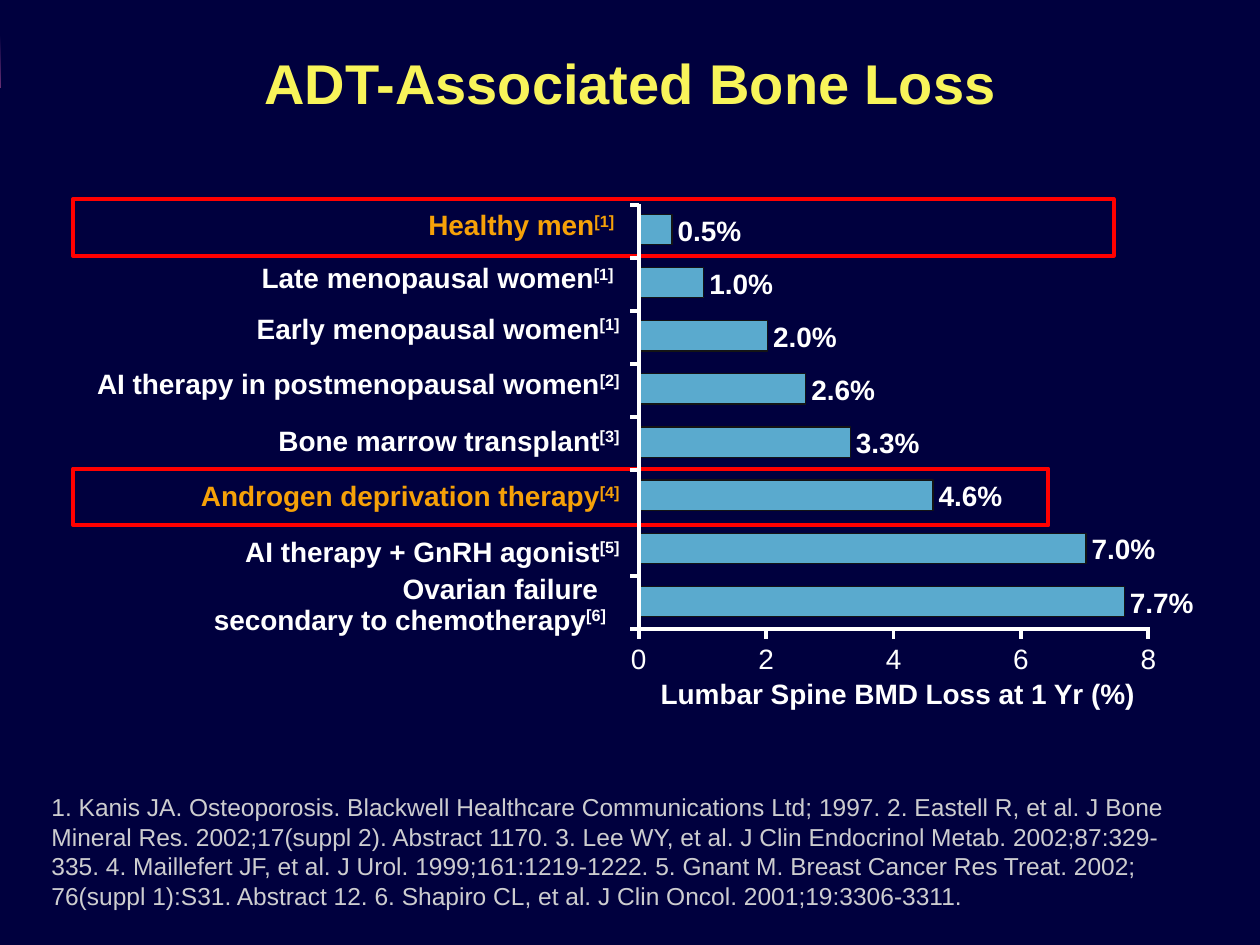
import dataclasses

import pptx
import pptx.dml.color
import pptx.enum.shapes
import pptx.enum.text
import pptx.oxml
import pptx.oxml.ns
import pptx.util

Pt = pptx.util.Pt
ALIGN = pptx.enum.text.PP_ALIGN
RECTANGLE = pptx.enum.shapes.MSO_SHAPE.RECTANGLE


def color(value):
    return pptx.dml.color.RGBColor.from_string(value)


@dataclasses.dataclass(frozen=True)
class Theme:
    font: str = "Arial"
    background: str = "00003E"
    band: str = "682E73"
    title: str = "F8F45A"
    text: str = "FFFFFF"
    accent: str = "F6A108"
    frame: str = "FF0000"
    bar: str = "5AAACE"
    bar_line: str = "141415"
    reference: str = "CDCDCF"
    title_size: int = 32
    body_size: int = 16
    reference_size: int = 14
    heavy_line: float = 2.25
    thin_line: float = 0.75


class SlideBuilder:
    def __init__(self, presentation, theme):
        self.theme = theme
        self.slide = presentation.slides.add_slide(presentation.slide_layouts[5])
        fill = self.slide.background.fill
        fill.solid()
        fill.fore_color.rgb = color(theme.background)

    def format_run(self, run, font_color, size, bold, superscript=False):
        values = {"name": self.theme.font, "size": Pt(size), "bold": bold}
        for name, value in values.items():
            setattr(run.font, name, value)
        run.font.color.rgb = color(font_color)
        if superscript:
            run.font._element.set("baseline", "30000")

    def title(self, text, left, top, width, height):
        shape = self.slide.shapes.title
        box = {"left": left, "top": top, "width": width, "height": height}
        for name, value in box.items():
            setattr(shape, name, Pt(value))
        shape.fill.solid()
        shape.fill.fore_color.rgb = color(self.theme.background)
        shape.text_frame.vertical_anchor = pptx.enum.text.MSO_ANCHOR.MIDDLE
        paragraph = shape.text_frame.paragraphs[0]
        paragraph.alignment = ALIGN.CENTER
        run = paragraph.add_run()
        run.text = text
        self.format_run(run, self.theme.title, self.theme.title_size, True)

    def rectangle(self, left, top, width, height, fill=None, line=None, weight=1):
        shape = self.slide.shapes.add_shape(
            RECTANGLE, Pt(left), Pt(top), Pt(width), Pt(height))
        shape.shadow.inherit = False
        if fill:
            shape.fill.solid()
            shape.fill.fore_color.rgb = color(fill)
        else:
            shape.fill.background()
        if line:
            shape.line.color.rgb = color(line)
            shape.line.width = Pt(weight)
        else:
            shape.line.fill.background()
        return shape

    def band(self, width, height):
        shape = self.rectangle(0, 0, width, height)
        shape.fill.gradient()
        shape.fill.gradient_angle = 90
        stops = ((0, self.theme.band), (0.6, self.theme.background))
        for stop, (position, value) in zip(shape.fill.gradient_stops, stops):
            stop.position = position
            stop.color.rgb = color(value)
        # Keep the band behind the title
        self.slide.shapes._spTree.insert(2, shape._element)

    def line(self, start, end):
        connector = self.slide.shapes.add_connector(
            pptx.enum.shapes.MSO_CONNECTOR.STRAIGHT, *map(Pt, start + end))
        connector.line.color.rgb = color(self.theme.text)
        connector.line.width = Pt(self.theme.heavy_line)
        connector._element.spPr.append(
            pptx.oxml.parse_xml("<a:effectLst %s/>" % pptx.oxml.ns.nsdecls("a")))

    def text(self, lines, left, top, width, height, alignment, font_color=None,
             size=None, bold=False, wrap=False, inset=(0, 0), spacing=None, note=""):
        shape = self.slide.shapes.add_textbox(
            Pt(left), Pt(top), Pt(width), Pt(height))
        frame = shape.text_frame
        horizontal, vertical = map(Pt, inset)
        values = {"word_wrap": wrap, "margin_left": horizontal,
                  "margin_right": horizontal, "margin_top": vertical,
                  "margin_bottom": vertical}
        for name, value in values.items():
            setattr(frame, name, value)
        for index, line in enumerate(lines):
            paragraph = frame.add_paragraph() if index else frame.paragraphs[0]
            paragraph.alignment = alignment
            paragraph.line_spacing = spacing
            pieces = [(line, False)]
            if note and index == len(lines) - 1:
                pieces.append((note, True))
            for piece, superscript in pieces:
                run = paragraph.add_run()
                run.text = piece
                self.format_run(run, font_color or self.theme.text,
                                size or self.theme.body_size, bold, superscript)


# Label lines, note, label right edge, top and width, value, drawn bar value
ROWS = [
    (["Healthy men"], "[1] ", 353.5, 118.8, 187, 0.5, 0.5),
    (["Late menopausal women"], "[1]", 350.6, 149, 216, 1.0, 1.0),
    (["Early menopausal women"], "[1]", 354, 177.8, 230, 2.0, 2.0),
    (["AI therapy in postmenopausal women"], "[2]", 354, 209.5, 315, 2.6, 2.6),
    (["Bone marrow transplant"], "[3]", 354, 241.9, 199, 3.3, 3.3),
    (["Androgen deprivation therapy"], "[4]", 354, 273.6, 248, 4.6, 4.6),
    (["AI therapy + GnRH agonist"], "[5]", 354, 305.3, 244, 7.0, 7.0),
    (["Ovarian failure ", "secondary to chemotherapy"], "[6]", 346.3, 329, 257,
     7.7, 7.6),
]
HIGHLIGHTS = {0: (113.8, 594.7), 5: (267.8, 557.3)}  # row: frame top, width
REFERENCES = (
    "1. Kanis JA. Osteoporosis. Blackwell Healthcare Communications Ltd; 1997. "
    "2. Eastell R, et al. J Bone Mineral Res. 2002;17(suppl 2). Abstract 1170. "
    "3. Lee WY, et al. J Clin Endocrinol Metab. 2002;87:329-335. "
    "4. Maillefert JF, et al. J Urol. 1999;161:1219-1222. "
    "5. Gnant M. Breast Cancer Res Treat. 2002; 76(suppl 1):S31. Abstract 12. "
    "6. Shapiro CL, et al. J Clin Oncol. 2001;19:3306-3311.")

AXIS_X, AXIS_TOP, AXIS_BOTTOM = 365, 117.4, 359.4
UNIT, TICK = 36.4, 4.7
ROW_STEP = (AXIS_BOTTOM - AXIS_TOP) / len(ROWS)
BAR_TOP, BAR_HEIGHT, BAR_STEP = 122.6, 17.3, 30.35
LINE_HEIGHT = 19.4


def main():
    presentation = pptx.Presentation()
    presentation.slide_width, presentation.slide_height = Pt(720), Pt(540)
    theme = Theme()
    builder = SlideBuilder(presentation, theme)

    # Heading
    builder.band(720, 50.4)
    builder.title("ADT-Associated Bone Loss", 0.72, 3.6, 719.28, 87.1)

    # Category labels
    for index, (lines, note, right, top, width, _, _) in enumerate(ROWS):
        builder.text(lines, right - width, top, width, LINE_HEIGHT * len(lines),
                     ALIGN.RIGHT, theme.accent if index in HIGHLIGHTS else None,
                     bold=True, wrap=True, note=note,
                     spacing=0.9 if len(lines) > 1 else None)

    # Highlight frames
    for top, width in HIGHLIGHTS.values():
        builder.rectangle(41.8, top, width, 32.4,
                          line=theme.frame, weight=theme.heavy_line)

    # Category ticks, with none above the seventh row
    for index in range(len(ROWS) + 1):
        if index != 6:
            y = AXIS_TOP + index * ROW_STEP
            builder.line((AXIS_X - TICK, y), (AXIS_X, y))

    # Value axis
    builder.line((AXIS_X - 1, AXIS_BOTTOM), (657, AXIS_BOTTOM))
    for value in range(0, 9, 2):
        x = AXIS_X + value * UNIT
        builder.line((x, AXIS_BOTTOM), (x, AXIS_BOTTOM + 5.5))
        builder.text([str(value)], x - 4.4, 366.5, 8.8, LINE_HEIGHT, ALIGN.CENTER)
    builder.text(["Lumbar Spine BMD Loss at 1 Yr (%)"], 376.6, 386.6, 272.9,
                 LINE_HEIGHT, ALIGN.CENTER, bold=True)

    # Bars and their values
    for index, (*_, value, drawn) in enumerate(ROWS):
        top, width = BAR_TOP + index * BAR_STEP, drawn * UNIT
        builder.rectangle(AXIS_X + 0.8, top, width, BAR_HEIGHT,
                          theme.bar, theme.bar_line, theme.thin_line)
        builder.text([f"{value:.1f}%"], AXIS_X + width + 3.8, top - 0.7, 36.7,
                     LINE_HEIGHT, ALIGN.CENTER, bold=True)
    builder.line((AXIS_X, AXIS_BOTTOM - 0.8), (AXIS_X, AXIS_TOP - 0.8))

    # References
    builder.text([REFERENCES], 22.3, 449.3, 668.2, 74.9, ALIGN.LEFT,
                 theme.reference, theme.reference_size, wrap=True, inset=(7.2, 3.6))

    presentation.save("out.pptx")


if __name__ == "__main__":
    main()
